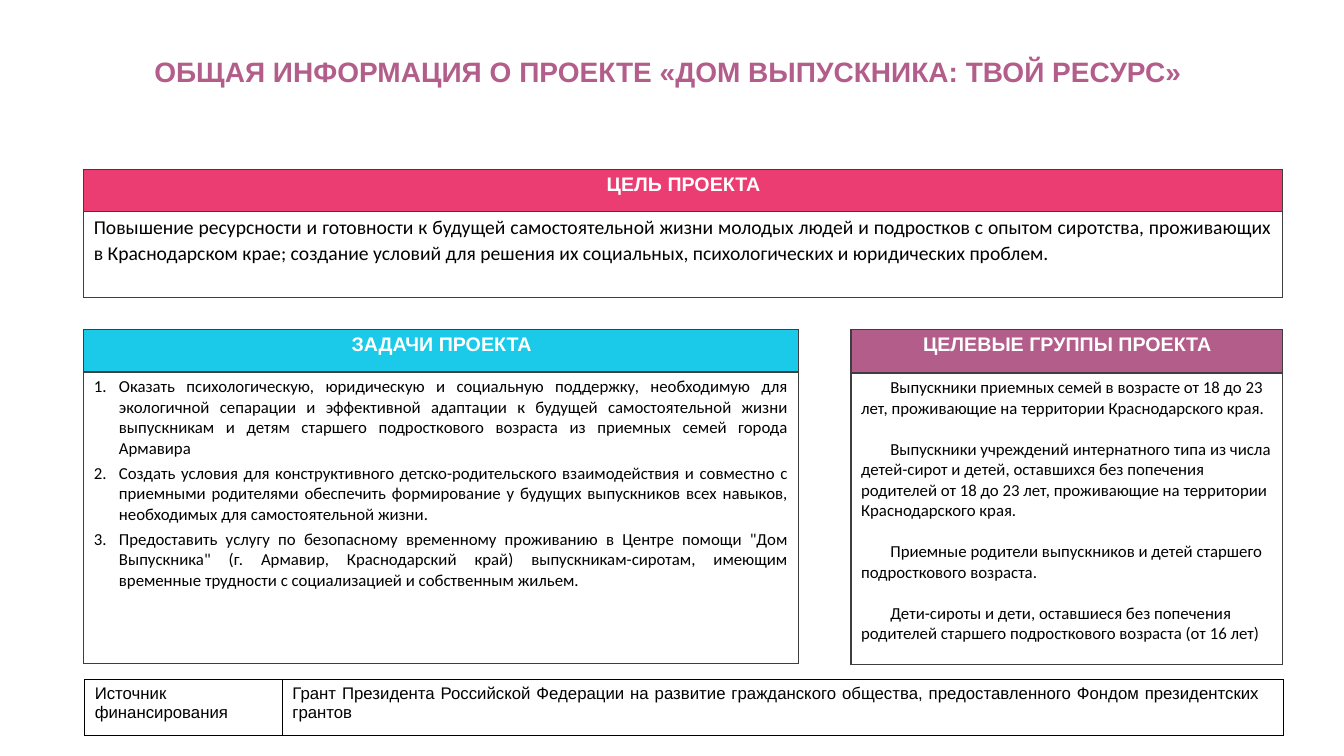
from lxml.etree import SubElement
from pptx import Presentation
from pptx.dml.color import RGBColor
from pptx.enum.text import MSO_ANCHOR, PP_ALIGN
from pptx.oxml.ns import qn
from pptx.util import Inches, Pt

PINK = RGBColor(0xEC, 0x3D, 0x73)
CYAN = RGBColor(0x1B, 0xCA, 0xE8)
PLUM = RGBColor(0xB3, 0x5D, 0x8B)
GREY = RGBColor(0x3E, 0x3E, 0x3E)
BLACK = RGBColor(0, 0, 0)
WHITE = RGBColor(0xFF, 0xFF, 0xFF)

deck = Presentation()
deck.slide_width, deck.slide_height = Inches(13.33), Inches(7.5)
slide = deck.slides.add_slide(deck.slide_layouts[5])


def add_grid(left, top, cols, rows, line, width):
    """Add a plain table with ruled cells."""
    frame = slide.shapes.add_table(len(rows), len(cols), Inches(left), Inches(top),
                                   Inches(sum(cols)), Inches(sum(rows)))
    grid = frame.table
    grid.first_row = grid.horz_banding = False
    for col, size in zip(grid.columns, cols):
        col.width = Inches(size)
    for row, size in zip(grid.rows, rows):
        row.height = Inches(size)
    for cell in grid.iter_cells():
        props = cell._tc.get_or_add_tcPr()
        for side in ("a:lnL", "a:lnR", "a:lnT", "a:lnB"):
            edge = SubElement(props, qn(side), w=str(Pt(width)))
            fill = SubElement(edge, qn("a:solidFill"))
            SubElement(fill, qn("a:srgbClr"), val=str(line))
        cell.fill.background()
    return grid


def write(cell, texts, font, size, color=BLACK, bold=False, align=PP_ALIGN.LEFT,
          top=0.05, left=0.1, right=0.1, indent=0, gap=0, spacing=None, number=False):
    """Fill a cell with one paragraph per text."""
    cell.margin_left = cell.margin_bottom = 0
    cell.margin_right, cell.margin_top = Inches(right), Inches(top)
    frame = cell.text_frame
    for i, text in enumerate(texts):
        para = frame.paragraphs[0] if i == 0 else frame.add_paragraph()
        para.text = text
        para.alignment = align
        if spacing:
            para.line_spacing = spacing
        if i:
            para.space_before = Pt(gap)
        props = para._p.get_or_add_pPr()
        props.set("marL", str(Inches(left)))
        props.set("indent", str(Inches(indent)))
        if number:
            SubElement(props, qn("a:buAutoNum"), type="arabicPeriod")
        para.font.name, para.font.size = font, Pt(size)
        para.font.bold, para.font.color.rgb = bold, color


# Title
title = slide.shapes.title
title.left, title.top = Inches(1.53), Inches(0.44)
title.width, title.height = Inches(10.85), Inches(0.44)
frame = title.text_frame
frame.text = "ОБЩАЯ ИНФОРМАЦИЯ О ПРОЕКТЕ «ДОМ ВЫПУСКНИКА: ТВОЙ РЕСУРС»"
frame.margin_left = frame.margin_right = frame.margin_bottom = 0
frame.margin_top = Inches(0.1)
frame.vertical_anchor = MSO_ANCHOR.TOP
para = frame.paragraphs[0]
para.alignment = PP_ALIGN.LEFT
para.font.name, para.font.size = "Arial", Pt(20)
para.font.bold, para.font.color.rgb = True, PLUM

# Goal, tasks and target groups: a coloured header over a text cell
goal = ["Повышение ресурсности и готовности к будущей самостоятельной жизни молодых людей и подростков с опытом сиротства, проживающих в Краснодарском крае; создание условий для решения их социальных, психологических и юридических проблем."]
tasks = [
    "Оказать психологическую, юридическую и социальную поддержку, необходимую для экологичной сепарации и эффективной адаптации к будущей самостоятельной жизни выпускникам и детям старшего подросткового возраста из приемных семей города Армавира",
    "Создать условия для конструктивного детско-родительского взаимодействия и совместно с приемными родителями обеспечить формирование у будущих выпускников всех навыков, необходимых для самостоятельной жизни.",
    'Предоставить услугу по безопасному временному проживанию в Центре помощи "Дом Выпускника" (г. Армавир, Краснодарский край) выпускникам-сиротам, имеющим временные трудности с социализацией и собственным жильем.',
]
groups = [
    "Выпускники приемных семей в возрасте от 18 до 23 лет, проживающие на территории Краснодарского края.",
    "Выпускники учреждений интернатного типа из числа детей-сирот и детей, оставшихся без попечения родителей от 18 до 23 лет, проживающие на территории Краснодарского края.",
    "Приемные родители выпускников и детей старшего подросткового возраста.",
    "Дети-сироты и дети, оставшиеся без попечения родителей старшего подросткового возраста (от 16 лет)",
]
panels = [
    ("ЦЕЛЬ ПРОЕКТА", PINK, 0.83, 1.68, 11.89, (0.42, 0.85), goal,
     dict(size=14, align=PP_ALIGN.JUSTIFY, top=0.03, spacing=1.07)),
    ("ЗАДАЧИ ПРОЕКТА", CYAN, 0.83, 3.27, 7.09, (0.42, 2.89), tasks,
     dict(size=12, align=PP_ALIGN.JUSTIFY, left=0.35, indent=-0.25, gap=3.3, number=True)),
    ("ЦЕЛЕВЫЕ ГРУППЫ ПРОЕКТА", PLUM, 8.44, 3.27, 4.28, (0.43, 2.89), groups,
     dict(size=12, indent=0.29, gap=14.6)),
]
for head, color, left, top, width, rows, texts, style in panels:
    grid = add_grid(left, top, [width], rows, GREY, 1)
    cell = grid.cell(0, 0)
    write(cell, [head], "Arial", 14, WHITE, True, PP_ALIGN.CENTER,
          top=0.04, left=0.01, right=0)
    cell.fill.solid()
    cell.fill.fore_color.rgb = color
    write(grid.cell(1, 0), texts, "Calibri", **style)

# Funding source
grid = add_grid(0.84, 6.74, [1.96, 9.93], [0.55], BLACK, 0.5)
write(grid.cell(0, 0), ["Источник", "финансирования"], "Arial", 12)
write(grid.cell(0, 1), ["Грант Президента Российской Федерации на развитие гражданского общества, предоставленного Фондом президентских грантов"],
      "Arial", 12, align=PP_ALIGN.JUSTIFY, right=0.23)

deck.save("out.pptx")
